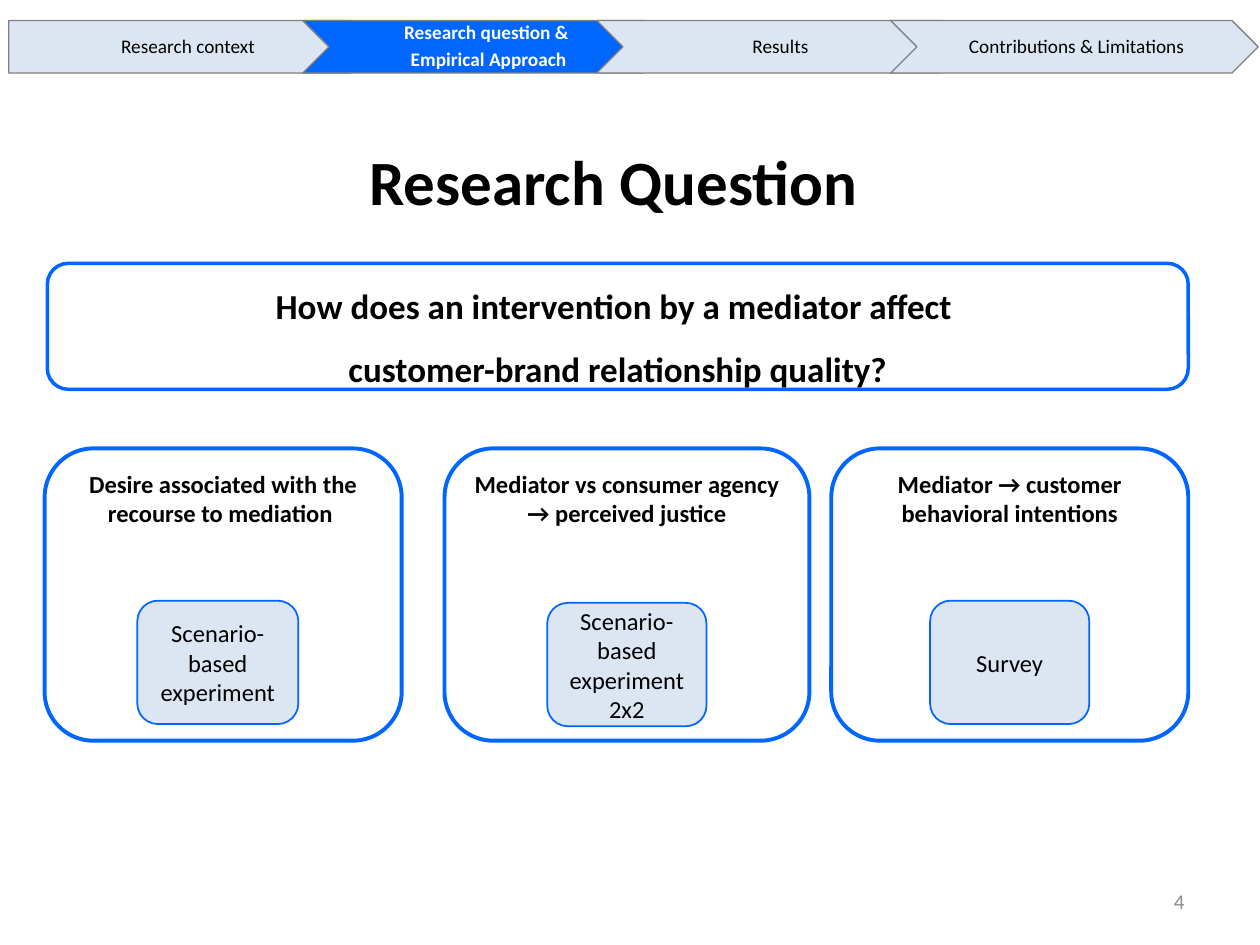
from pptx import Presentation
from pptx.dml.color import RGBColor
from pptx.enum.shapes import MSO_SHAPE as Shape
from pptx.enum.text import MSO_ANCHOR as Anchor, PP_ALIGN as Align
from pptx.util import Pt

FONT = "Calibri"
BLACK = RGBColor(0x00, 0x00, 0x00)
WHITE = RGBColor(0xFF, 0xFF, 0xFF)
BLUE = RGBColor(0x00, 0x66, 0xFF)
PALE_BLUE = RGBColor(0xDC, 0xE6, 0xF2)
GRAY = RGBColor(0x80, 0x80, 0x80)
NUMBER_GRAY = RGBColor(0x8C, 0x8C, 0x8C)

DEFAULT_INSETS = (7.2, 3.6, 7.2, 3.6)
STEP_WIDTH, STEP_HEIGHT, STEP_PITCH = 210, 30, 168
STEPS = [
    ["Research context"],
    ["Research question & ", "Empirical Approach"],
    ["Results "],
    ["Contributions & Limitations"],
]
CURRENT_STEP = 1
STUDIES = [
    ((25.5, 204), "Desire associated with the recourse to mediation ",
     (78.5, 343.25, 92, 70.5), "Scenario-based experiment"),
    ((254, 208.5), "Mediator vs consumer agency → perceived justice",
     (312.75, 344.5, 91, 70.5), "Scenario-based experiment 2x2"),
    ((475, 204), "Mediator → customer behavioral intentions",
     (531.5, 343.25, 91, 70.5), "Survey"),
]


def write_text(shape, lines, size, color=BLACK, bold=False, align=Align.CENTER,
               anchor=Anchor.MIDDLE, spacing=None, after=0, insets=DEFAULT_INSETS):
    frame = shape.text_frame
    frame.word_wrap = True
    frame.vertical_anchor = anchor
    (frame.margin_left, frame.margin_top,
     frame.margin_right, frame.margin_bottom) = map(Pt, insets)
    for index, line in enumerate(lines):
        paragraph = frame.add_paragraph() if index else frame.paragraphs[0]
        paragraph.alignment = align
        paragraph.line_spacing = spacing
        paragraph.space_after = Pt(after)
        run = paragraph.add_run()
        run.text = line
        run.font.name = FONT
        run.font.size = Pt(size)
        run.font.bold = bold
        run.font.color.rgb = color


def add_label(slide, box, lines, size, **style):
    write_text(slide.shapes.add_textbox(*map(Pt, box)), lines, size, **style)


def add_panel(slide, kind, box, fill, line, line_width):
    shape = slide.shapes.add_shape(kind, *map(Pt, box))
    shape.shadow.inherit = False
    shape.fill.solid()
    shape.fill.fore_color.rgb = fill
    shape.line.color.rgb = line
    shape.line.width = Pt(line_width)
    return shape


def add_step(slide, index, lines):
    left, top = 5 + index * STEP_PITCH, 11.75
    current = index == CURRENT_STEP
    kind = Shape.CHEVRON if index else Shape.PENTAGON
    add_panel(slide, kind, (left, top, STEP_WIDTH, STEP_HEIGHT),
              BLUE if current else PALE_BLUE, GRAY, 0.75)
    text_left, text_width = (left + 15, 180) if index else (left, 202.5)
    add_label(slide, (text_left, top, text_width, STEP_HEIGHT), lines, 11,
              color=WHITE if current else BLACK, bold=current,
              spacing=0.9, after=3.5, insets=(4, 2, 1.5, 2))


def add_study(slide, span, topic, method_box, method):
    left, width = span
    panel = add_panel(slide, Shape.ROUNDED_RECTANGLE, (left, 256.25, width, 167),
                      WHITE, BLUE, 2.25)
    write_text(panel, [topic], 14, bold=True, anchor=Anchor.TOP)
    badge = add_panel(slide, Shape.ROUNDED_RECTANGLE, method_box, PALE_BLUE, BLUE, 1)
    write_text(badge, [method], 14)


def main():
    presentation = Presentation()
    presentation.slide_width, presentation.slide_height = Pt(720), Pt(540)
    slide = presentation.slides.add_slide(presentation.slide_layouts[6])

    for index, lines in enumerate(STEPS):
        add_step(slide, index, lines)

    question = add_panel(slide, Shape.ROUNDED_RECTANGLE, (27, 150.5, 652, 72),
                         WHITE, BLUE, 2)
    write_text(question, ["How does an intervention by a mediator affect ",
                          "customer-brand relationship quality?"],
               20, bold=True, spacing=1.5)
    add_label(slide, (178.5, 67.5, 344, 71.5), ["Research Question"], 36, bold=True)

    for study in STUDIES:
        add_study(slide, *study)

    add_label(slide, (516, 500.5, 168, 28.75), ["4"], 12,
              color=NUMBER_GRAY, align=Align.RIGHT)
    presentation.save("out.pptx")


if __name__ == "__main__":
    main()
